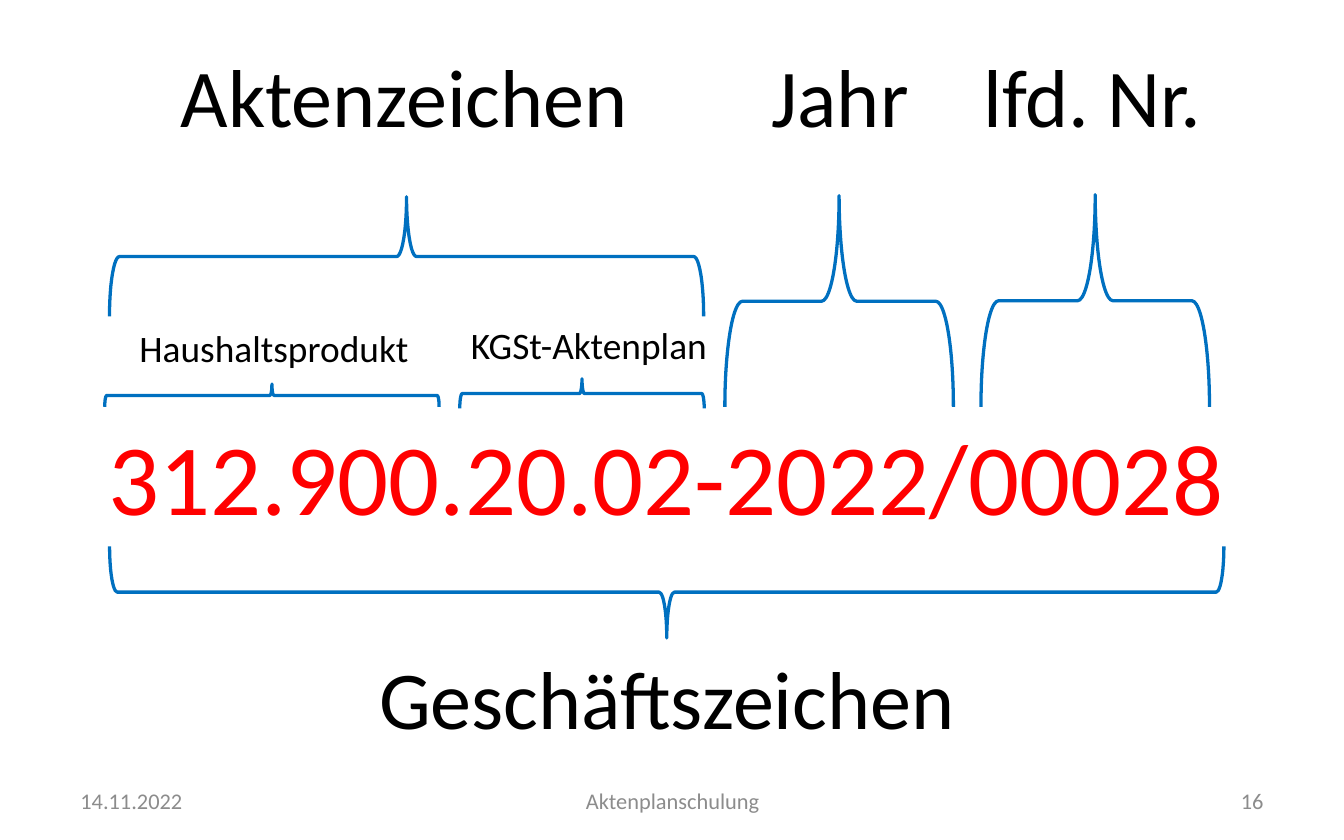
from dataclasses import dataclass

from pptx import Presentation
from pptx.dml.color import RGBColor
from pptx.enum.shapes import MSO_SHAPE as Shape
from pptx.enum.text import MSO_ANCHOR as Anchor, MSO_AUTO_SIZE as AutoSize, PP_ALIGN as Align
from pptx.util import Cm, Pt


@dataclass(frozen=True)
class Theme:
    font: str = "Calibri"
    text: RGBColor = RGBColor(0x00, 0x00, 0x00)
    accent: RGBColor = RGBColor(0xFF, 0x00, 0x00)
    brace: RGBColor = RGBColor(0x00, 0x70, 0xC0)
    muted: RGBColor = RGBColor(0x8C, 0x8C, 0x8C)
    number_size: int = 54
    heading_size: int = 44
    label_size: int = 20
    footer_size: int = 12
    brace_width: float = 1.75


class SlideBuilder:
    def __init__(self, slide, theme):
        self.slide = slide
        self.theme = theme

    def text(self, text, left, top, width, height, size, color, align=Align.CENTER):
        shape = self.slide.shapes.add_textbox(Cm(left), Cm(top), Cm(width), Cm(height))
        text_frame = shape.text_frame
        text_frame.word_wrap = True
        text_frame.auto_size = AutoSize.SHAPE_TO_FIT_TEXT
        text_frame.text = text
        paragraph = text_frame.paragraphs[0]
        paragraph.alignment = align
        font = paragraph.runs[0].font
        font.name = self.theme.font
        font.size = Pt(size)
        font.color.rgb = color
        return shape

    def heading(self, text, left, top, width):
        self.text(text, left, top, width, 2.13, self.theme.heading_size, self.theme.text)

    def label(self, text, left, top, width):
        self.text(text, left, top, width, 1.12, self.theme.label_size, self.theme.text)

    def footer(self, text, left, width, align):
        shape = self.text(text, left, 14.71, width, 0.84,
                          self.theme.footer_size, self.theme.muted, align)
        shape.text_frame.auto_size = AutoSize.NONE
        shape.text_frame.vertical_anchor = Anchor.MIDDLE

    def brace(self, left, top, width, height, rotation=270):
        """Place a horizontal brace by its box after the quarter turn."""
        offset = (width - height) / 2
        shape = self.slide.shapes.add_shape(
            Shape.RIGHT_BRACE, Cm(left + offset), Cm(top - offset), Cm(height), Cm(width))
        shape.rotation = rotation
        shape.shadow.inherit = False
        shape.fill.background()
        shape.line.color.rgb = self.theme.brace
        shape.line.width = Pt(self.theme.brace_width)


def main():
    presentation = Presentation()
    presentation.slide_width, presentation.slide_height = Cm(25.4), Cm(15.88)
    theme = Theme()
    builder = SlideBuilder(presentation.slides.add_slide(presentation.slide_layouts[6]), theme)

    # Footer
    builder.footer("14.11.2022", 1.27, 5.92, Align.LEFT)
    builder.footer("Aktenplanschulung", 8.69, 8.05, Align.CENTER)
    builder.footer("16", 18.21, 5.92, Align.RIGHT)

    # Reference number
    builder.text("312.900.20.02-2022/00028", 0.51, 7.72, 24.18, 2.57,
                 theme.number_size, theme.accent)

    # Main parts above the number
    for text, left, width in (("Aktenzeichen", 2.21, 10.87),
                              ("Jahr", 14.1, 3.56),
                              ("lfd. Nr.", 18.16, 4.98)):
        builder.heading(text, left, 0.74, width)
    builder.brace(2.07, 3.72, 11.23, 2.26)
    builder.brace(13.7, 3.7, 4.32, 3.99)
    builder.brace(18.54, 3.68, 4.32, 4.01)

    # Components of the Aktenzeichen
    builder.label("Haushaltsprodukt", 2.13, 6.02, 6.1)
    builder.brace(1.98, 7.26, 6.32, 0.43)
    builder.label("KGSt-Aktenplan", 8.31, 5.97, 5.64)
    builder.brace(8.69, 7.16, 4.62, 0.56)

    # Whole number, named below
    builder.brace(2.07, 10.33, 21.06, 1.73, rotation=90)
    builder.heading("Geschäftszeichen", 6.4, 12.12, 12.42)

    presentation.save("out.pptx")


if __name__ == "__main__":
    main()
